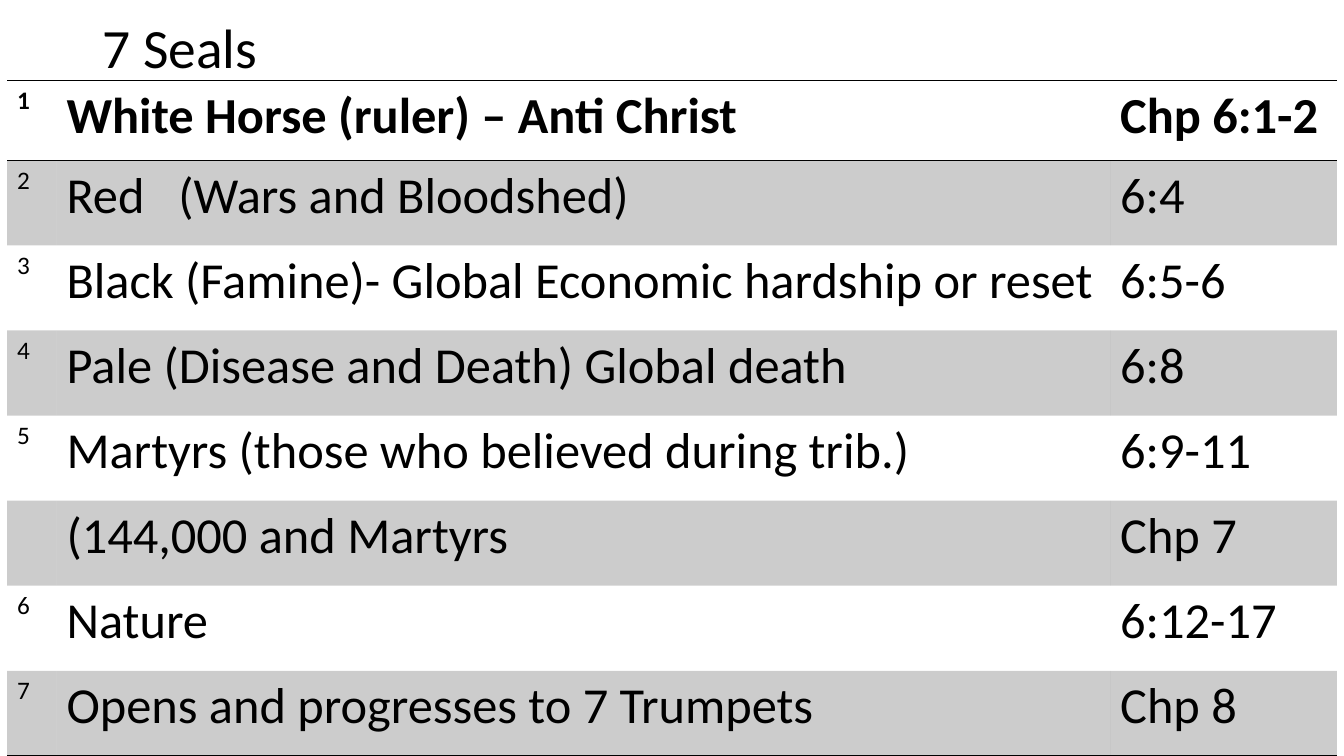
from lxml import etree
from pptx import Presentation
from pptx.dml.color import RGBColor
from pptx.enum.text import MSO_ANCHOR, MSO_AUTO_SIZE, PP_ALIGN
from pptx.oxml.ns import qn
from pptx.util import Inches, Pt

LEFT = PP_ALIGN.LEFT
MIDDLE = MSO_ANCHOR.MIDDLE
NO_AUTOFIT = MSO_AUTO_SIZE.NONE
BLACK = RGBColor(0x00, 0x00, 0x00)
PLAIN_TABLE = "{2D5ABB26-0587-4C30-8999-92F81FD0307C}"

COLUMN_WIDTHS = (0.49, 10.45, 2.25)
TABLE_HEIGHT = 6.7
FIRST_ROW_HEIGHT = 0.79
SEALS = [
    ("1", "White Horse (ruler) – Anti Christ", "Chp 6:1-2"),
    ("2", "Red\t(Wars and Bloodshed)", "6:4"),
    ("3", "Black (Famine)- Global Economic hardship or reset", "6:5-6"),
    ("4", "Pale (Disease and Death) Global death", "6:8"),
    ("5", "Martyrs (those who believed during trib.)", "6:9-11"),
    ("", "(144,000 and Martyrs", "Chp 7"),
    ("6", "Nature", "6:12-17"),
    ("7", "Opens and progresses to 7 Trumpets", "Chp 8"),
]


class SealsSlide:
    font_name = "Calibri"
    number_size = 18
    text_size = 36
    tab_stop = 1.11
    band_opacity = 20

    def __init__(self, presentation):
        self.slide = presentation.slides.add_slide(presentation.slide_layouts[5])

    def style(self, paragraph, size, bold=False):
        paragraph.alignment = LEFT
        font = paragraph.font
        font.name = self.font_name
        font.size = Pt(size)
        font.bold = bold
        font.color.rgb = BLACK

    def title(self, text, left, top, width, height):
        title = self.slide.shapes.title
        title.left, title.top = Inches(left), Inches(top)
        title.width, title.height = Inches(width), Inches(height)
        frame = title.text_frame
        frame.text = text
        frame.word_wrap = True
        frame.auto_size = NO_AUTOFIT
        frame.vertical_anchor = MIDDLE
        frame.paragraphs[0].line_spacing = 0.9
        self.style(frame.paragraphs[0], 39.6)

    def table(self, rows, left, top):
        table = self.slide.shapes.add_table(
            len(rows), len(COLUMN_WIDTHS), Inches(left), Inches(top),
            Inches(sum(COLUMN_WIDTHS)), Inches(TABLE_HEIGHT)).table
        table.first_row = table.horz_banding = False
        table._tbl.tblPr.find(qn("a:tableStyleId")).text = PLAIN_TABLE
        for column, width in zip(table.columns, COLUMN_WIDTHS):
            column.width = Inches(width)
        other_height = (TABLE_HEIGHT - FIRST_ROW_HEIGHT) / (len(rows) - 1)
        last = len(rows) - 1
        for row_index, row in enumerate(rows):
            table.rows[row_index].height = Inches(
                other_height if row_index else FIRST_ROW_HEIGHT)
            sides = {0: ("T", "B"), last: ("B",)}.get(row_index, ())
            for column_index, text in enumerate(row):
                cell = table.cell(row_index, column_index)
                self.cell_text(cell, text, column_index == 0, row_index == 0)
                self.cell_fill(cell, row_index % 2 == 1)
                self.cell_borders(cell, sides)

    def cell_text(self, cell, text, is_number, bold):
        cell.text = text
        paragraph = cell.text_frame.paragraphs[0]
        self.style(paragraph, self.number_size if is_number else self.text_size, bold)
        if "\t" in text:
            stops = etree.Element(qn("a:tabLst"))
            etree.SubElement(stops, qn("a:tab"),
                             pos=str(Inches(self.tab_stop)), algn="l")
            paragraph._p.get_or_add_pPr().insert(0, stops)

    def cell_fill(self, cell, banded):
        if not banded:
            cell.fill.background()
            return
        cell.fill.solid()
        cell.fill.fore_color.rgb = BLACK
        color = cell._tc.tcPr.find(".//" + qn("a:srgbClr"))
        etree.SubElement(color, qn("a:alpha"), val=str(self.band_opacity * 1000))

    def cell_borders(self, cell, sides):
        for position, side in enumerate(sides):
            line = etree.Element(qn("a:ln" + side), w=str(Pt(1)))
            fill = etree.SubElement(line, qn("a:solidFill"))
            etree.SubElement(fill, qn("a:srgbClr"), val=str(BLACK))
            cell._tc.get_or_add_tcPr().insert(position, line)


def main():
    presentation = Presentation()
    presentation.slide_width = Inches(13.33)
    presentation.slide_height = Inches(7.5)
    seals = SealsSlide(presentation)
    seals.title("7 Seals", 0.92, 0.22, 11.5, 0.57)
    seals.table(SEALS, 0.07, 0.8)
    presentation.save("out.pptx")


if __name__ == "__main__":
    main()
